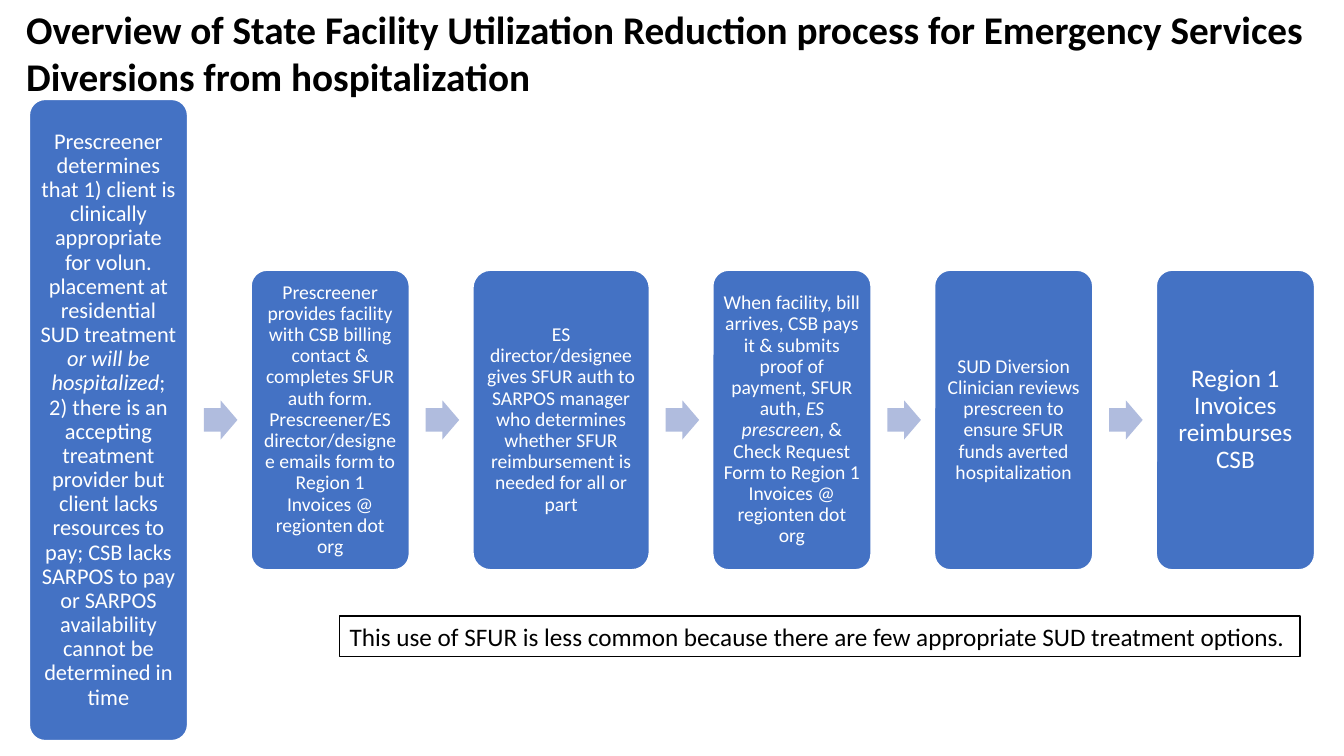
"""Builds the slide on the SFUR process for Emergency Services diversions."""
from dataclasses import dataclass

import pptx
import pptx.dml.color
import pptx.enum.shapes
import pptx.enum.text
import pptx.util

Pt = pptx.util.Pt
Shape = pptx.enum.shapes.MSO_SHAPE
Anchor = pptx.enum.text.MSO_ANCHOR
Align = pptx.enum.text.PP_ALIGN


@dataclass(frozen=True)
class Theme:
    font: str = "Calibri"
    ink: str = "000000"
    paper: str = "FFFFFF"
    card: str = "4472C4"
    arrow: str = "B0BCDE"
    title_size: int = 28
    note_size: int = 18
    line_width: int = 1


class ProcessSlide:
    def __init__(self, deck, theme):
        self.theme = theme
        self.slide = deck.slides.add_slide(deck.slide_layouts[5])

    def color(self, value):
        return pptx.dml.color.RGBColor.from_string(value)

    def style(self, paragraph, size, color, bold=False):
        for run in paragraph.runs:
            run.font.name = self.theme.font
            run.font.size = Pt(size)
            run.font.bold = bold
            run.font.color.rgb = self.color(color)

    def shape(self, kind, left, top, width, height, fill=None, line=None):
        shape = self.slide.shapes.add_shape(kind, Pt(left), Pt(top), Pt(width), Pt(height))
        shape.shadow.inherit = False
        if fill:
            shape.fill.solid()
            shape.fill.fore_color.rgb = self.color(fill)
        else:
            shape.fill.background()
        if line:
            shape.line.color.rgb = self.color(line)
            shape.line.width = Pt(self.theme.line_width)
        else:
            shape.line.fill.background()
        return shape

    def title(self, text, left, top, width, height):
        title = self.slide.shapes.title
        title.left, title.top, title.width, title.height = map(Pt, (left, top, width, height))
        frame = title.text_frame
        frame.text = text
        frame.word_wrap = True
        frame.auto_size = pptx.enum.text.MSO_AUTO_SIZE.NONE
        frame.vertical_anchor = Anchor.TOP
        heading = frame.paragraphs[0]
        heading.alignment = Align.LEFT
        heading.line_spacing = 1.0
        self.style(heading, self.theme.title_size, self.theme.ink, bold=True)

    def step(self, pieces, size, left, top, width, height):
        """Draws a step card; every second piece of its text is italic."""
        card = self.shape(Shape.ROUNDED_RECTANGLE, left, top, width, height,
                          self.theme.card, self.theme.paper)
        card.adjustments[0] = 0.1
        frame = card.text_frame
        frame.word_wrap = True
        frame.vertical_anchor = Anchor.MIDDLE
        inset = Pt(0.3 * size)
        frame.margin_left = frame.margin_right = inset
        frame.margin_top = frame.margin_bottom = inset
        wording = frame.paragraphs[0]
        wording.alignment = Align.CENTER
        wording.line_spacing = 0.9
        for index, piece in enumerate(pieces):
            run = wording.add_run()
            run.text = piece
            run.font.italic = index % 2 == 1
        self.style(wording, size, self.theme.paper)

    def arrow(self, left, top, width, height):
        arrow = self.shape(Shape.RIGHT_ARROW, left, top, width, height, self.theme.arrow)
        arrow.adjustments[0] = 0.6
        arrow.adjustments[1] = 0.5

    def note(self, text, left, top, width, height):
        note = self.shape(Shape.RECTANGLE, left, top, width, height, line=self.theme.ink)
        frame = note.text_frame
        frame.text = text
        frame.word_wrap = True
        frame.vertical_anchor = Anchor.TOP
        frame.paragraphs[0].alignment = Align.LEFT
        self.style(frame.paragraphs[0], self.theme.note_size, self.theme.ink)


STEPS = [
    (113, 458, 16, [
        "Prescreener determines that 1) client is clinically appropriate for volun. "
        "placement at residential SUD treatment ",
        "or will be hospitalized",
        "; 2) there is an accepting treatment provider but client lacks resources to pay; "
        "CSB lacks SARPOS to pay or SARPOS availability cannot be determined in time"]),
    (113, 214, 14, [
        "Prescreener provides facility with CSB billing contact & completes SFUR auth form. "
        "Prescreener/ES director/designee emails form to Region 1 Invoices @ regionten dot org"]),
    (126, 214, 14, [
        "ES director/designee gives SFUR auth to SARPOS manager who determines whether "
        "SFUR reimbursement is needed for all or part"]),
    (113, 214, 14, [
        "When facility, bill arrives, CSB pays it & submits proof of payment, SFUR auth, ",
        "ES prescreen",
        ", & Check Request Form to Region 1 Invoices @ regionten dot org"]),
    (113, 214, 14, [
        "SUD Diversion Clinician reviews prescreen to ensure SFUR funds averted hospitalization"]),
    (113, 214, 18, ["Region 1 Invoices reimburses CSB"]),
]
FLOW_LEFT, FLOW_MIDDLE, STEP_GAP = 21, 300, 45.4
ARROW_WIDTH, ARROW_HEIGHT, ARROW_OFFSET = 24, 28, 11.6


def main():
    deck = pptx.Presentation()
    deck.slide_width, deck.slide_height = Pt(960), Pt(540)
    overview = ProcessSlide(deck, Theme())
    left = FLOW_LEFT
    for number, (width, height, size, pieces) in enumerate(STEPS):
        if number:
            overview.arrow(left - STEP_GAP + ARROW_OFFSET, FLOW_MIDDLE - ARROW_HEIGHT / 2,
                           ARROW_WIDTH, ARROW_HEIGHT)
        overview.step(pieces, size, left, FLOW_MIDDLE - height / 2, width, height)
        left += width + STEP_GAP
    overview.title("Overview of State Facility Utilization Reduction process for "
                   "Emergency Services Diversions from hospitalization", 11.5, 0, 937.5, 75)
    overview.note("This use of SFUR is less common because there are few appropriate "
                  "SUD treatment options.", 242.6, 440, 686, 29)
    deck.save("out.pptx")


if __name__ == "__main__":
    main()
